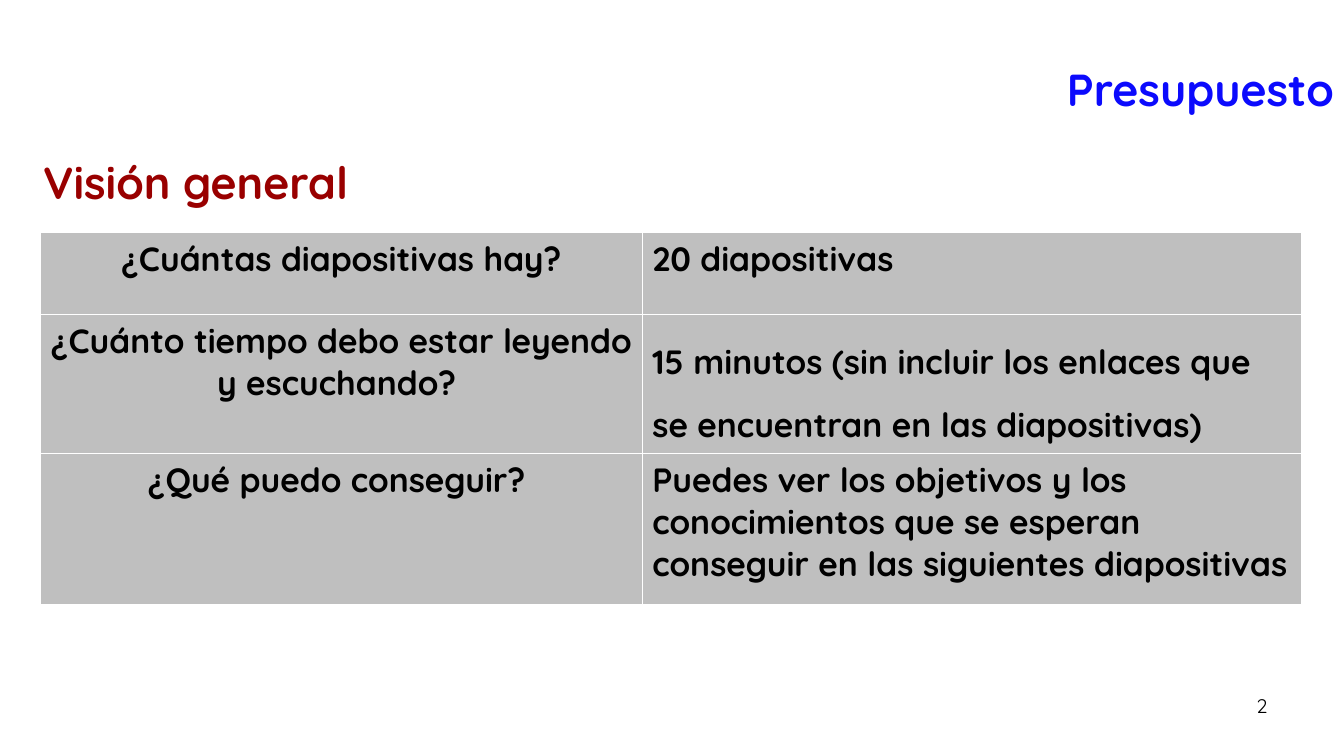
from lxml import etree
from pptx import Presentation
from pptx import util as u
from pptx.dml.color import RGBColor
from pptx.enum import text
from pptx.oxml import ns

WIDTH, HEIGHT = 13.33, 7.5
FONT = "Quicksand"
COLOURS = {
    "title": "0B0AFD",
    "heading": "990000",
    "ink": "000000",
    "cell": "BFBFBF",
    "border": "FFFFFF",
}
COLUMNS = [5.97, 6.54]
ROWS = [0.81, 1.38, 1.5]
OVERVIEW = [
    ("¿Cuántas diapositivas hay?", "20 diapositivas"),
    ("¿Cuánto tiempo debo estar leyendo y escuchando? ",
     "15 minutos (sin incluir los enlaces que se encuentran en las diapositivas)"),
    ("¿Qué puedo conseguir? ",
     "Puedes ver los objetivos y los conocimientos que se esperan "
     "conseguir en las siguientes diapositivas"),
]
LEFT, CENTER, RIGHT = text.PP_ALIGN.LEFT, text.PP_ALIGN.CENTER, text.PP_ALIGN.RIGHT


def write(frame, words, size, colour, align=LEFT, bold=True):
    frame.text = words
    frame.word_wrap = True
    para = frame.paragraphs[0]
    para.alignment = align
    for span in para.runs:
        span.font.name = FONT
        span.font.size = u.Pt(size)
        span.font.bold = bold
        span.font.color.rgb = RGBColor.from_string(COLOURS[colour])
    return para


def add_text(page, area, words, size, colour, align=LEFT, bold=True,
             anchor=text.MSO_ANCHOR.TOP):
    box = page.shapes.add_textbox(*(u.Inches(length) for length in area))
    write(box.text_frame, words, size, colour, align, bold)
    box.text_frame.vertical_anchor = anchor


def add_borders(cell, points=1):
    properties = cell._tc.get_or_add_tcPr()
    for place, side in enumerate(("lnL", "lnR", "lnT", "lnB")):
        line = etree.Element(ns.qn(f"a:{side}"), w=str(u.Pt(points)))
        fill = etree.SubElement(line, ns.qn("a:solidFill"))
        etree.SubElement(fill, ns.qn("a:srgbClr"), val=COLOURS["border"])
        properties.insert(place, line)


def add_overview(page, left, top):
    frame = page.shapes.add_table(
        len(ROWS), len(COLUMNS), u.Inches(left), u.Inches(top),
        u.Inches(sum(COLUMNS)), u.Inches(sum(ROWS)))
    table = frame.table
    for column, width in zip(table.columns, COLUMNS):
        column.width = u.Inches(width)
    for row, height, answers in zip(table.rows, ROWS, OVERVIEW):
        row.height = u.Inches(height)
        for cell, words, align in zip(row.cells, answers, (CENTER, LEFT)):
            write(cell.text_frame, words, 24, "ink", align)
            cell.fill.solid()
            cell.fill.fore_color.rgb = RGBColor.from_string(COLOURS["cell"])
            add_borders(cell)
    # The reading time has wider line spacing
    table.cell(1, 1).text_frame.paragraphs[0].line_spacing = 1.5


def main():
    deck = Presentation()
    deck.slide_width, deck.slide_height = u.Inches(WIDTH), u.Inches(HEIGHT)
    page = deck.slides.add_slide(deck.slide_layouts[6])

    # Title and heading
    add_text(page, (0.92, 0, WIDTH - 0.92, 0.16 * HEIGHT), "Presupuesto", 32,
             "title", RIGHT, anchor=text.MSO_ANCHOR.BOTTOM)
    add_text(page, (0.33, 1.49, 0.35 * WIDTH, 0.67), "Visión general", 32, "heading")

    # Questions and answers
    add_overview(page, 0.4, 2.31)

    # Slide number
    add_text(page, (9.56, 6.83, 3.11, 0.52), "2", 14, "ink", RIGHT, bold=False)
    deck.save("out.pptx")


if __name__ == "__main__":
    main()
